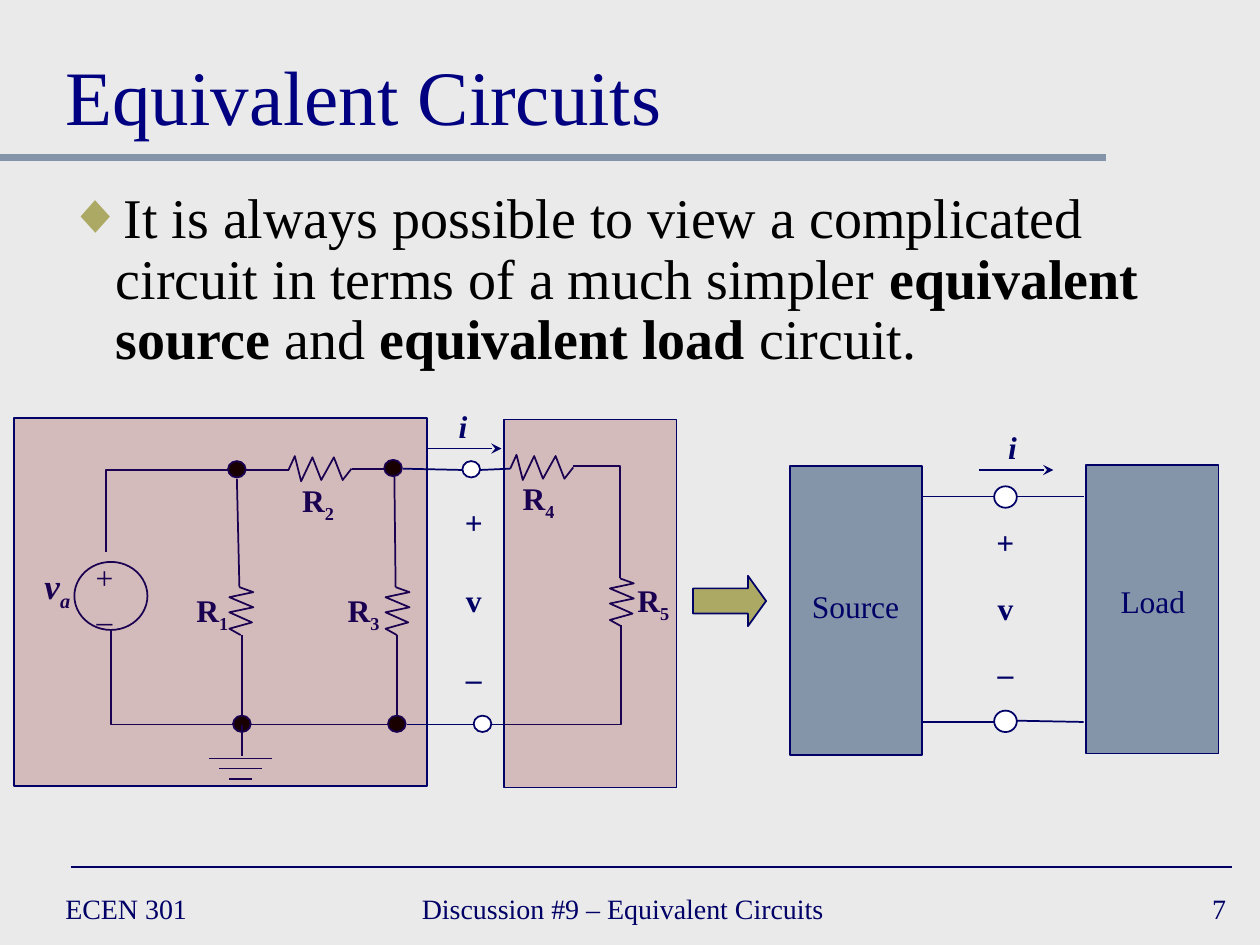
from typing import NamedTuple

from lxml import etree
from pptx import Presentation
from pptx.dml.color import RGBColor
from pptx.enum.shapes import MSO_CONNECTOR, MSO_SHAPE
from pptx.enum.text import MSO_ANCHOR, PP_ALIGN
from pptx.oxml.ns import qn
from pptx.util import Inches, Pt

FONT = "Times New Roman"
LEFT, MID, RIGHT = PP_ALIGN.LEFT, PP_ALIGN.CENTER, PP_ALIGN.RIGHT
TOP, CENTER, BOTTOM = MSO_ANCHOR.TOP, MSO_ANCHOR.MIDDLE, MSO_ANCHOR.BOTTOM
RECT, OVAL, ARROW = MSO_SHAPE.RECTANGLE, MSO_SHAPE.OVAL, MSO_SHAPE.RIGHT_ARROW
STRAIGHT = MSO_CONNECTOR.STRAIGHT
COLOR = {"back": "EAEAEA", "ink": "000066", "title": "000080", "black": "000000",
         "white": "FFFFFF", "slate": "8495A9", "olive": "ACA964", "zone": "800000"}

# Zigzag offsets from the first lead of a resistor
ZIG_TALL = [(0, 0), (0.11, 0.04), (-0.08, 0.08), (0.11, 0.16),
            (-0.08, 0.2), (0.1, 0.28), (-0.08, 0.33), (0.01, 0.38)]
ZIG_WIDE = [(0, 0), (0.05, -0.11), (0.1, 0.09), (0.19, -0.1),
            (0.26, 0.08), (0.36, -0.1), (0.43, 0.08), (0.5, -0.01)]


class Run(NamedTuple):
    text: str
    bold: bool = False
    slant: bool = False
    sub: bool = False


class Wire(NamedTuple):
    x1: float
    y1: float
    x2: float
    y2: float
    color: str = "ink"
    width: float = 1
    head: bool = False


class Shape(NamedTuple):
    kind: int
    x: float
    y: float
    w: float
    h: float
    fill: str = ""
    alpha: int = 100


class Label(NamedTuple):
    x: float
    y: float
    w: float
    h: float
    lines: list
    size: float = 18
    color: str = "ink"
    align: int = MID
    anchor: int = TOP
    wrap: bool = False
    gap: float = 0


class Part(NamedTuple):
    x: float
    y: float
    zig: list
    num: str
    left: float
    top: float


def rgb(name: str) -> RGBColor:
    return RGBColor.from_string(COLOR[name])


def draw_wire(slide, wire: Wire) -> None:
    ends = [Inches(v) for v in wire[:4]]
    link = slide.shapes.add_connector(STRAIGHT, *ends)
    link.line.color.rgb = rgb(wire.color)
    link.line.width = Pt(wire.width)
    props = link._element.spPr
    if wire.head:
        etree.SubElement(props.find(qn("a:ln")), qn("a:tailEnd"), type="stealth")
    etree.SubElement(props, qn("a:effectLst"))


def outline(shape) -> None:
    shape.shadow.inherit = False
    shape.line.color.rgb = rgb("ink")
    shape.line.width = Pt(1)


def draw_trace(slide, points: list) -> None:
    spots = [(Inches(x), Inches(y)) for x, y in points]
    pen = slide.shapes.build_freeform(*spots[0])
    pen.add_line_segments(spots[1:], close=False)
    shape = pen.convert_to_shape()
    shape.fill.background()
    outline(shape)


def draw_shape(slide, item: Shape):
    shape = slide.shapes.add_shape(item.kind, *[Inches(v) for v in item[1:5]])
    outline(shape)
    if not item.fill:
        shape.fill.background()
        return shape
    shape.fill.solid()
    shape.fill.fore_color.rgb = rgb(item.fill)
    if item.alpha < 100:
        tint = shape._element.spPr.find(".//" + qn("a:srgbClr"))
        etree.SubElement(tint, qn("a:alpha"), val=str(item.alpha * 1000))
    return shape


def draw_label(slide, label: Label):
    box = slide.shapes.add_textbox(*[Inches(v) for v in label[:4]])
    frame = box.text_frame
    frame.word_wrap = label.wrap
    frame.vertical_anchor = label.anchor
    for i, runs in enumerate(label.lines):
        para = frame.add_paragraph() if i else frame.paragraphs[0]
        para.alignment = label.align
        if i:
            para.space_before = Pt(label.gap)
        for item in runs:
            run = para.add_run()
            run.text = item.text
            font = run.font
            font.name, font.size = FONT, Pt(label.size)
            font.bold, font.italic = item.bold, item.slant
            font.color.rgb = rgb(label.color)
            if item.sub:
                run._r.get_or_add_rPr().set("baseline", "-25000")
    return box


def draw_part(slide, part: Part) -> None:
    draw_trace(slide, [(part.x + dx, part.y + dy) for dx, dy in part.zig])
    name = [Run("R", True), Run(part.num, True, sub=True)]
    draw_label(slide, Label(part.left, part.top, 0.47, 0.4, [name]))


def add_bullet(para) -> None:
    props = para._p.get_or_add_pPr()
    props.set("marL", str(Inches(0.38)))
    props.set("indent", str(Inches(-0.38)))
    tint = etree.SubElement(props, qn("a:buClr"))
    etree.SubElement(tint, qn("a:srgbClr"), val=COLOR["olive"])
    etree.SubElement(props, qn("a:buFont"), typeface=FONT)
    etree.SubElement(props, qn("a:buChar"), char="◆")
    para.line_spacing = 0.9


def main() -> None:
    deck = Presentation()
    deck.slide_width, deck.slide_height = Inches(10), Inches(7.5)
    slide = deck.slides.add_slide(deck.slide_layouts[6])
    slide.background.fill.solid()
    slide.background.fill.fore_color.rgb = rgb("back")

    # Rules, footer and title
    draw_wire(slide, Wire(0, 1.25, 8.78, 1.25, "slate", 4))
    draw_wire(slide, Wire(0.56, 6.88, 9.78, 6.88))
    for x, w, text, align in [(0.42, 2.17, "ECEN 301", LEFT),
                              (3.25, 3.83, "Discussion #9 – Equivalent Circuits", LEFT),
                              (7.75, 2.08, "7", RIGHT)]:
        draw_label(slide, Label(x, 7, w, 0.42, [[Run(text)]], 16, "ink", align, CENTER, True))
    draw_label(slide, Label(0.42, 0.17, 9.17, 1, [[Run("Equivalent Circuits")]],
                            44, "title", LEFT, BOTTOM, True))

    # Body
    words = [Run("It is always possible to view a complicated circuit "
                 "in terms of a much simpler "),
             Run("equivalent source ", True), Run("and "),
             Run("equivalent load", True), Run(" circuit.")]
    body = draw_label(slide, Label(0.44, 1.46, 9.14, 1.54, [words], 32, "black", LEFT, TOP, True))
    add_bullet(body.text_frame.paragraphs[0])

    # Voltage source and black nodes
    draw_shape(slide, Shape(OVAL, 0.59, 4.46, 0.58, 0.54))
    draw_label(slide, Label(0.66, 4.38, 0.34, 0.7, [[Run("+")], [Run("–")]], gap=3))
    draw_label(slide, Label(0.25, 4.43, 0.41, 0.44,
                            [[Run("v", True, True), Run("a", True, True, True)]], 20))
    for x, y in [(1.81, 3.66), (3.05, 3.65), (1.85, 5.68), (3.08, 5.68)]:
        draw_shape(slide, Shape(OVAL, x, y, 0.14, 0.13, "black"))

    # Resistors
    for part in [Part(1.9, 4.66, ZIG_TALL, "1", 1.45, 4.64),
                 Part(2.29, 3.73, ZIG_WIDE, "2", 2.29, 3.77),
                 Part(3.14, 4.66, ZIG_TALL, "3", 2.65, 4.64),
                 Part(4.05, 3.72, ZIG_WIDE, "4", 4.04, 3.75),
                 Part(4.92, 4.59, ZIG_TALL, "5", 4.95, 4.56)]:
        draw_part(slide, part)

    # Corner wires, straight wires and ground
    for bend in [[(1.85, 5.75), (0.88, 5.75), (0.88, 4.99)],
                 [(0.84, 4.38), (0.84, 3.73), (1.81, 3.73)],
                 [(4.55, 3.7), (4.92, 3.7), (4.92, 4.59)],
                 [(3.9, 5.75), (4.93, 5.75), (4.93, 4.96)]]:
        draw_trace(slide, bend)
    for ends in [(1.88, 3.8, 1.9, 4.66), (1.92, 5.68, 1.92, 5.04),
                 (3.13, 3.78, 3.14, 4.66), (3.15, 5.68, 3.15, 5.04),
                 (1.95, 3.73, 2.29, 3.73), (3.05, 3.72, 2.79, 3.72),
                 (1.99, 5.75, 3.08, 5.75), (1.92, 6, 1.92, 5.75)]:
        draw_wire(slide, Wire(*ends))
    for i, half in enumerate([0.25, 0.17, 0.09]):
        y = 6.02 + 0.08 * i
        draw_wire(slide, Wire(1.91 - half, y, 1.91 + half, y))

    # Tinted zones, then the two blocks and the arrow between
    for item in [Shape(RECT, 0.11, 3.32, 3.28, 2.92, "zone", 20),
                 Shape(RECT, 4, 3.33, 1.37, 2.92, "zone", 20),
                 Shape(RECT, 6.27, 3.7, 1.05, 2.29, "slate"),
                 Shape(RECT, 8.62, 3.69, 1.05, 2.29, "slate")]:
        draw_shape(slide, item)
    arrow = draw_shape(slide, Shape(ARROW, 5.5, 4.57, 0.58, 0.4, "olive"))
    arrow.adjustments[1] = 0.36
    for x, y, w, text in [(6.34, 4.61, 0.9, "Source"), (8.79, 4.57, 0.72, "Load")]:
        draw_label(slide, Label(x, y, w, 0.4, [[Run(text)]]))

    # Terminals, their wires, current and voltage
    for x, y, w, h in [(3.67, 3.66, 0.14, 0.13), (3.76, 5.68, 0.14, 0.13),
                       (7.89, 3.86, 0.18, 0.17), (7.89, 5.64, 0.18, 0.17)]:
        draw_shape(slide, Shape(OVAL, x, y, w, h, "white"))
    for ends in [(3.81, 3.73, 4.05, 3.72), (3.76, 5.75, 3.23, 5.75),
                 (3.67, 3.73, 3.2, 3.72), (7.89, 3.94, 7.31, 3.94),
                 (8.07, 3.94, 8.6, 3.94), (7.89, 5.73, 7.31, 5.73),
                 (8.07, 5.72, 8.6, 5.73)]:
        draw_wire(slide, Wire(*ends))
    for x, y in [(3.39, 3.56), (7.77, 3.73)]:
        draw_wire(slide, Wire(x, y, x + 0.59, y, head=True))
    for x, y in [(3.54, 3.18), (7.9, 3.35)]:
        draw_label(slide, Label(x, y, 0.27, 0.4, [[Run("i", True, True)]]))
    volts = [[Run(sign, True)] for sign in "+v–"]
    for x, y, h, gap in [(3.59, 3.94, 1.6, 23), (7.81, 4.1, 1.4, 16)]:
        draw_label(slide, Label(x, y, 0.34, h, volts, gap=gap))

    deck.save("out.pptx")


if __name__ == "__main__":
    main()
